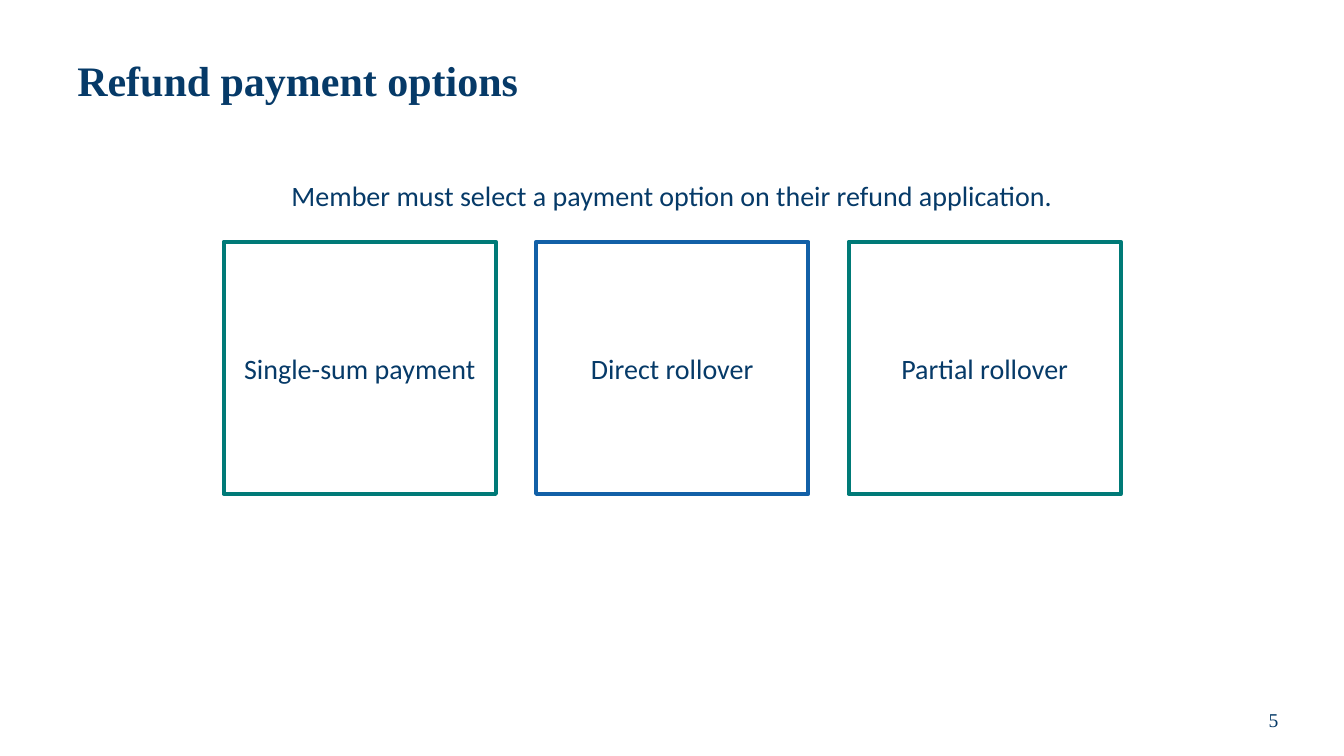
from pptx import Presentation
from pptx.dml.color import RGBColor
from pptx.enum.shapes import MSO_SHAPE
from pptx.enum.text import MSO_ANCHOR, MSO_AUTO_SIZE, PP_ALIGN
from pptx.util import Pt

RECT = MSO_SHAPE.RECTANGLE
TOP, MIDDLE = MSO_ANCHOR.TOP, MSO_ANCHOR.MIDDLE
LEFT, CENTER = PP_ALIGN.LEFT, PP_ALIGN.CENTER
NO_FIT = MSO_AUTO_SIZE.NONE
COLORS = {"navy": "063A68", "blue": "1260A7", "teal": "007A77"}
SERIF, SANS = "Times New Roman", "Calibri"


def rgb(name):
    return RGBColor.from_string(COLORS[name])


class SlideBuilder:
    def __init__(self, slide):
        self.slide = slide

    def set_text(self, sp, text, size, font, align=CENTER, anchor=MIDDLE, bold=False, spacing=1.0):
        tf = sp.text_frame
        tf.word_wrap = True
        tf.auto_size = NO_FIT
        tf.vertical_anchor = anchor
        p = tf.paragraphs[0]
        p.text = text
        p.alignment = align
        p.line_spacing = spacing
        p.font.name = font
        p.font.size = Pt(size)
        p.font.bold = bold
        p.font.color.rgb = rgb("navy")

    def title(self, text, x, y, w, h):
        sp = self.slide.shapes.title
        sp.left, sp.top, sp.width, sp.height = Pt(x), Pt(y), Pt(w), Pt(h)
        self.set_text(sp, text, 30, SERIF, align=LEFT, bold=True, spacing=0.9)

    def text(self, text, x, y, w, h, size, font, **style):
        sp = self.slide.shapes.add_textbox(Pt(x), Pt(y), Pt(w), Pt(h))
        self.set_text(sp, text, size, font, **style)

    def card(self, text, x, y, w, h, color):
        sp = self.slide.shapes.add_shape(RECT, Pt(x), Pt(y), Pt(w), Pt(h))
        sp.shadow.inherit = False
        sp.fill.background()
        sp.line.color.rgb = rgb(color)
        sp.line.width = Pt(3)
        self.set_text(sp, text, 20, SANS)


def main():
    prs = Presentation()
    prs.slide_width, prs.slide_height = Pt(960), Pt(540)
    s = SlideBuilder(prs.slides.add_slide(prs.slide_layouts[5]))

    s.title("Refund payment options", 48, 18, 864, 82.8)
    s.text("Member must select a payment option on their refund application.",
           48, 126.7, 864, 369.4, 20, SANS, anchor=TOP, spacing=0.9)

    options = [("Single-sum payment", "teal"), ("Direct rollover", "blue"), ("Partial rollover", "teal")]
    for i, (label, color) in enumerate(options):
        s.card(label, 159.8 + i * 223.2, 172.8, 194.4, 180, color)

    s.text("5", 867.6, 496.1, 84.2, 36, 14, SERIF)
    prs.save("out.pptx")


if __name__ == "__main__":
    main()
